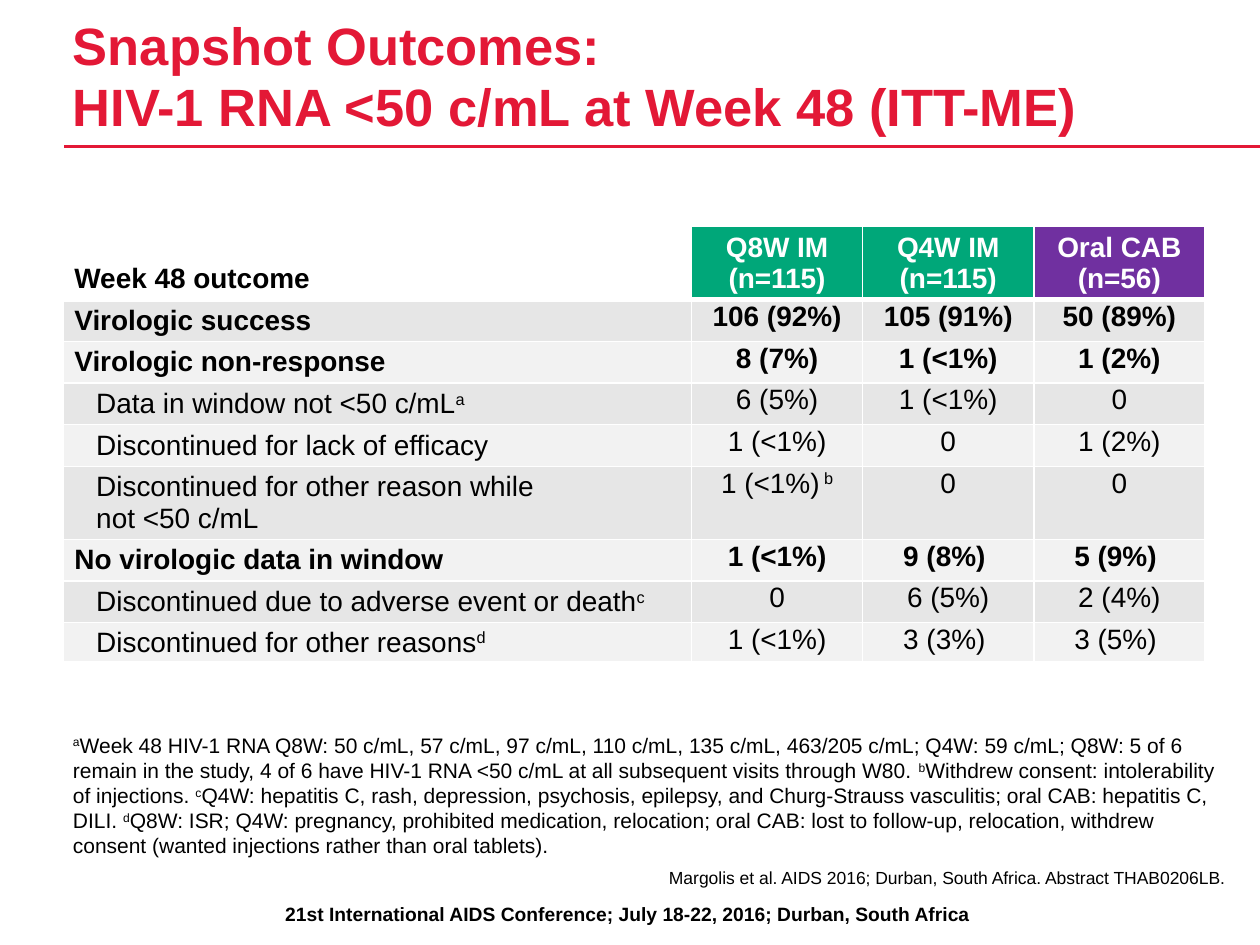
from lxml import etree
from pptx import Presentation
from pptx.dml.color import RGBColor
from pptx.enum import shapes, text
from pptx.oxml import ns
from pptx.util import Cm, Pt

RED = RGBColor(0xE3, 0x18, 0x36)
GREEN = RGBColor(0x00, 0xA7, 0x79)
PURPLE = RGBColor(0x70, 0x30, 0xA0)
BLACK = RGBColor(0, 0, 0)
WHITE = RGBColor(0xFF, 0xFF, 0xFF)
BANDS = (RGBColor(0xE6, 0xE6, 0xE6), RGBColor(0xF2, 0xF2, 0xF2))

# In all wording, ^a^ is a superscript, \v a line break, \n a new paragraph.
TITLE = "Snapshot Outcomes:\vHIV-1 RNA <50 c/mL at Week 48 (ITT-ME)"
CITATION = "Margolis et al. AIDS 2016; Durban, South Africa. Abstract THAB0206LB."
CONFERENCE = "21st International AIDS Conference; July 18-22, 2016; Durban, South Africa"
FOOTNOTES = (
    "^a^Week 48 HIV-1 RNA Q8W: 50 c/mL, 57 c/mL, 97 c/mL, 110 c/mL, 135 c/mL, "
    "463/205 c/mL; Q4W: 59 c/mL; Q8W: 5 of 6 remain in the study, 4 of 6 have "
    "HIV-1 RNA <50 c/mL at all subsequent visits through W80. "
    "^b^Withdrew consent: intolerability of injections. "
    "^c^Q4W: hepatitis C, rash, depression, psychosis, epilepsy, and "
    "Churg-Strauss vasculitis; oral CAB: hepatitis C, DILI. "
    "^d^Q8W: ISR; Q4W: pregnancy, prohibited medication, relocation; oral CAB: "
    "lost to follow-up, relocation, withdrew consent (wanted injections rather "
    "than oral tablets)."
)
HEADER = ("Week 48 outcome", "Q8W IM\v(n=115)", "Q4W IM\v(n=115)", "Oral CAB\v(n=56)")
HEADER_FILLS = (None, GREEN, GREEN, PURPLE)
OUTCOMES = [  # (is a main outcome, cells)
    (True, ("Virologic success", "106 (92%)", "105 (91%)", "50 (89%)")),
    (True, ("Virologic non-response", "8 (7%)", "1 (<1%)", "1 (2%)")),
    (False, ("Data in window not <50 c/mL^a^", "6 (5%)", "1 (<1%)", "0")),
    (False, ("Discontinued for lack of efficacy", "1 (<1%)", "0", "1 (2%)")),
    (False, ("Discontinued for other reason while\nnot <50 c/mL",
             "1 (<1%)^ b^", "0", "0")),
    (True, ("No virologic data in window", "1 (<1%)", "9 (8%) ", "5 (9%) ")),
    (False, ("Discontinued due to adverse event or death^c^",
             "0", "6 (5%)", "2 (4%)")),
    (False, ("Discontinued for other reasons^d^", "1 (<1%)", "3 (3%) ", "3 (5%) ")),
]
COLUMN_WIDTHS = (12.67, 3.45, 3.45, 3.45)
ROW_HEIGHTS = (1.47, 0.84, 0.84, 0.84, 0.84, 1.47, 0.84, 0.84, 0.79)
TABLE_LINE = Pt(18)

LEFT, CENTER, RIGHT = text.PP_ALIGN.LEFT, text.PP_ALIGN.CENTER, text.PP_ALIGN.RIGHT
TOP, BOTTOM = text.MSO_ANCHOR.TOP, text.MSO_ANCHOR.BOTTOM


def apply(target, values):
    for name, value in values.items():
        setattr(target, name, value)


def write(frame, wording, size, color=BLACK, bold=False, **paragraph_format):
    """Fill a text frame, reading the superscript and break marks."""
    for number, line in enumerate(wording.split("\n")):
        paragraph = frame.add_paragraph() if number else frame.paragraphs[0]
        apply(paragraph, paragraph_format)
        for piece_number, piece in enumerate(line.split("^")):
            for part_number, part in enumerate(piece.split("\v")):
                if part_number:
                    paragraph.add_line_break()
                if not part:
                    continue
                run = paragraph.add_run()
                run.text = part
                apply(run.font, {"name": "Arial", "size": Pt(size), "bold": bold})
                run.font.color.rgb = color
                if piece_number % 2:
                    run.font._element.set("baseline", "30000")


def place(shape, left, top, width, height, anchor):
    apply(shape, {"left": Cm(left), "top": Cm(top),
                  "width": Cm(width), "height": Cm(height)})
    apply(shape.text_frame, {
        "margin_left": 0, "margin_right": 0, "margin_top": 0, "margin_bottom": 0,
        "word_wrap": True, "auto_size": text.MSO_AUTO_SIZE.NONE,
        "vertical_anchor": anchor})
    return shape.text_frame


def add_borders(cell, bottom):
    properties = cell._tc.get_or_add_tcPr()
    for side, width in (("L", 1), ("R", 1), ("T", 1), ("B", bottom)):
        line = etree.SubElement(properties, ns.qn("a:ln" + side), w=str(Pt(width)))
        fill = etree.SubElement(line, ns.qn("a:solidFill"))
        etree.SubElement(fill, ns.qn("a:srgbClr"), val=str(WHITE))


def indent(frame, margin, first_line, level):
    for paragraph in frame.paragraphs:
        paragraph.level = level
        properties = paragraph._p.get_or_add_pPr()
        properties.set("marL", str(Cm(margin)))
        properties.set("indent", str(Cm(first_line)))


def fill_cell(cell, wording, row, column, main):
    is_header, is_label = row == 0, column == 0
    fill = HEADER_FILLS[column] if is_header else BANDS[(row - 1) % 2]
    add_borders(cell, 3 if is_header else 1)
    if fill is None:
        cell.fill.background()
    else:
        cell.fill.solid()
        cell.fill.fore_color.rgb = fill
    fixed_lines = is_header or is_label
    margin = Cm(0.03)
    if fixed_lines:
        lines = 2 if is_header or "\n" in wording else 1
        margin = (Cm(ROW_HEIGHTS[row]) - lines * TABLE_LINE) // 2
    apply(cell, {"margin_left": Cm(0.03), "margin_right": Cm(0.03),
                 "margin_top": margin, "margin_bottom": margin,
                 "vertical_anchor": BOTTOM if is_header else TOP})
    write(cell.text_frame, wording, 16, WHITE if is_header and not is_label else BLACK,
          main, alignment=LEFT if is_label else CENTER,
          line_spacing=TABLE_LINE if fixed_lines else 1.0)
    if is_label:
        indent(cell.text_frame, *((0.2, 0, 0) if main else (0, 0.64, 1)))


def add_outcome_table(slide):
    rows = [(True, HEADER)] + OUTCOMES
    table = slide.shapes.add_table(
        len(rows), len(HEADER), Cm(1.27), Cm(4.57),
        Cm(sum(COLUMN_WIDTHS)), Cm(sum(ROW_HEIGHTS))).table
    for column, width in zip(table.columns, COLUMN_WIDTHS):
        column.width = Cm(width)
    for row, (main, cells) in enumerate(rows):
        table.rows[row].height = Cm(ROW_HEIGHTS[row])
        for column, wording in enumerate(cells):
            fill_cell(table.cell(row, column), wording, row, column, main)


def main():
    presentation = Presentation()
    apply(presentation, {"slide_width": Cm(25.4), "slide_height": Cm(19.05)})
    slide = presentation.slides.add_slide(presentation.slide_layouts[4])
    holders = {holder.placeholder_format.idx: holder for holder in slide.placeholders}
    for unused in (2, 4):
        holders[unused]._element.getparent().remove(holders[unused]._element)

    write(place(slide.shapes.title, 1.47, 0.43, 20.96, 2.34, BOTTOM), TITLE, 30,
          RED, True, alignment=LEFT, line_spacing=Pt(35))
    rule = slide.shapes.add_connector(
        shapes.MSO_CONNECTOR.STRAIGHT, Cm(1.3), Cm(2.95), Cm(25.4), Cm(2.95))
    rule.line.color.rgb = RED
    rule.line.width = Pt(2)
    etree.SubElement(rule._element.spPr, ns.qn("a:effectLst"))

    add_outcome_table(slide)

    note_format = {"space_before": Pt(0), "space_after": Pt(3)}
    write(place(holders[1], 1.47, 14.61, 23.22, 2.69, BOTTOM), FOOTNOTES, 12,
          alignment=LEFT, **note_format)
    write(place(holders[3], 1.47, 17.48, 23.22, 0.51, TOP), CITATION, 10,
          alignment=RIGHT, **note_format)
    conference = slide.shapes.add_textbox(Cm(0.15), Cm(18.06), Cm(25.02), Cm(0.74))
    conference.text_frame.word_wrap = True
    write(conference.text_frame, CONFERENCE, 11, bold=True, alignment=CENTER)
    presentation.save("out.pptx")


if __name__ == "__main__":
    main()
